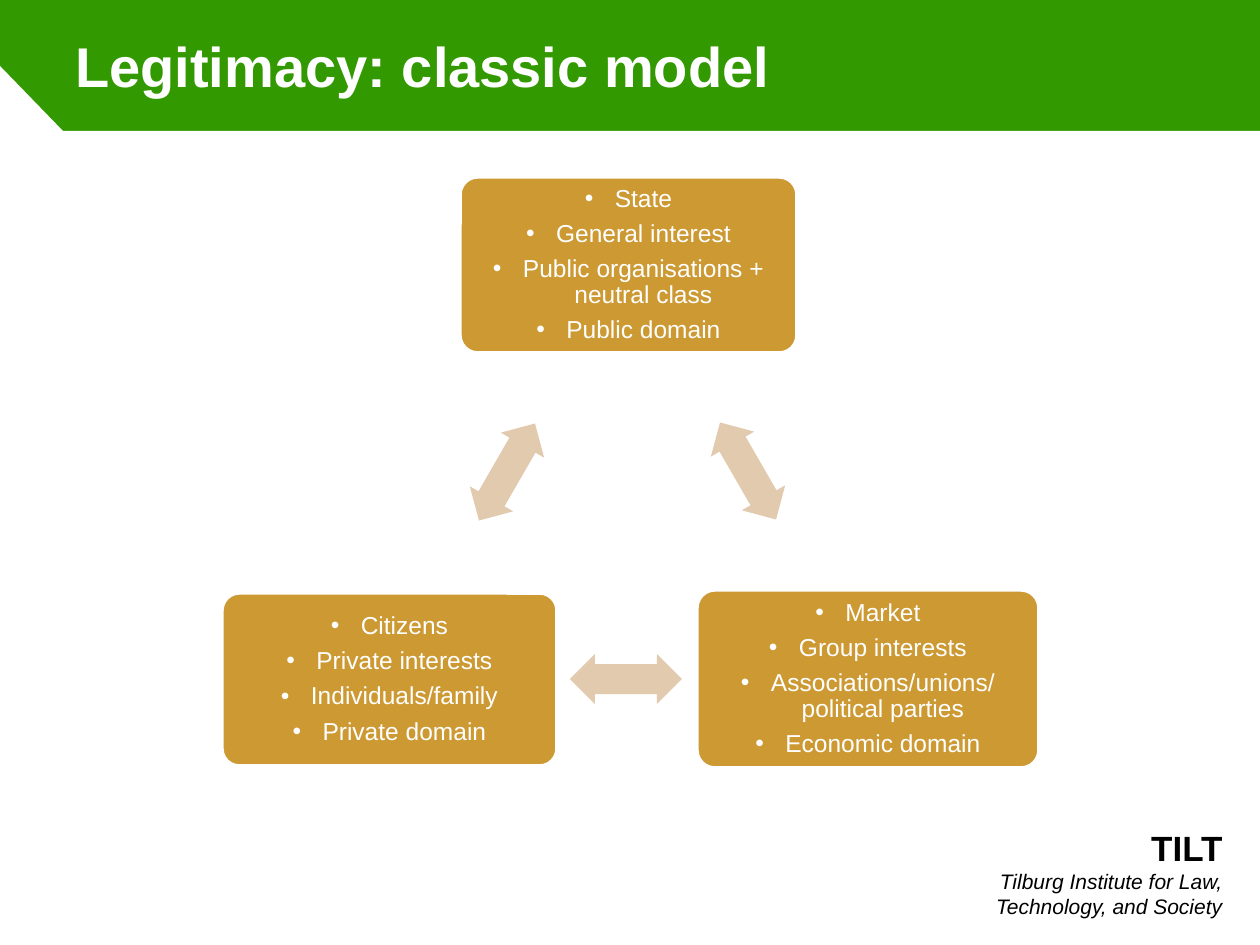
from dataclasses import dataclass

import pptx
import pptx.dml.color
import pptx.enum.shapes
import pptx.enum.text
import pptx.oxml.ns
import pptx.util
from lxml import etree

PX = pptx.util.Inches(1) / 126
WIDTH, HEIGHT = 1260, 945
MSO = pptx.enum.shapes.MSO_SHAPE
ALIGN = pptx.enum.text.PP_ALIGN
ANCHOR = pptx.enum.text.MSO_ANCHOR


@dataclass(frozen=True)
class Theme:
    font: str = "Arial"
    green: str = "339900"
    white: str = "FFFFFF"
    black: str = "000000"
    gold: str = "CC9933"
    sand: str = "E2CAAE"
    title_size: int = 32
    name_size: int = 20
    item_size: int = 14
    caption_size: int = 12


@dataclass(frozen=True)
class Box:
    x: int
    y: int
    w: int
    h: int

    def emu(self) -> tuple:
        return tuple(px(v) for v in (self.x, self.y, self.w, self.h))


@dataclass(frozen=True)
class Actor:
    box: Box
    items: tuple


@dataclass(frozen=True)
class Arrow:
    box: Box
    rotation: int


THEME = Theme()

ACTORS = (
    Actor(Box(460, 177, 337, 176),
          ("State", "General interest", "Public organisations + neutral class", "Public domain")),
    Actor(Box(697, 590, 342, 178),
          ("Market", "Group interests", "Associations/unions/political parties", "Economic domain")),
    Actor(Box(222, 593, 335, 173),
          ("Citizens", "Private interests", "Individuals/family", "Private domain")),
)
ARROWS = (
    Arrow(Box(692, 446, 112, 50), 60),
    Arrow(Box(570, 654, 112, 50), 180),
    Arrow(Box(451, 447, 112, 50), 300),
)


def px(value: int) -> int:
    return round(value * PX)


def rgb(color: str) -> pptx.dml.color.RGBColor:
    return pptx.dml.color.RGBColor.from_string(color)


def style_run(r, size: int, color: str, bold: bool = False, italic: bool = False) -> None:
    r.font.name = THEME.font
    r.font.size = pptx.util.Pt(size)
    r.font.color.rgb = rgb(color)
    r.font.bold = bold
    r.font.italic = italic


def paint(sp, color: str) -> None:
    sp.shadow.inherit = False
    sp.fill.solid()
    sp.fill.fore_color.rgb = rgb(color)
    sp.line.fill.background()


def add_bullet(p) -> None:
    pPr = p._p.get_or_add_pPr()
    pPr.set("marL", str(px(30)))
    pPr.set("indent", str(px(-30)))
    qn = pptx.oxml.ns.qn
    etree.SubElement(pPr, qn("a:buFont")).set("typeface", THEME.font)
    etree.SubElement(pPr, qn("a:buChar")).set("char", "•")


def add_text(s, box: Box, text: str):
    tf = s.shapes.add_textbox(*box.emu()).text_frame
    tf.word_wrap = True
    tf.text = text
    return tf


def add_body_panel(s) -> None:
    fb = s.shapes.build_freeform(63, 131, scale=PX)
    fb.add_line_segments([(0, 66), (0, HEIGHT), (WIDTH, HEIGHT), (WIDTH, 131)], close=True)
    paint(fb.convert_to_shape(), THEME.white)


def add_actor(s, actor: Actor) -> None:
    sp = s.shapes.add_shape(MSO.ROUNDED_RECTANGLE, *actor.box.emu())
    sp.adjustments[0] = 0.1
    paint(sp, THEME.gold)
    sp.line.color.rgb = rgb(THEME.white)
    sp.line.width = pptx.util.Pt(2)
    tf = sp.text_frame
    tf.word_wrap = True
    tf.vertical_anchor = ANCHOR.MIDDLE
    tf.margin_left = tf.margin_right = tf.margin_top = tf.margin_bottom = px(7)
    tf.text = "\n".join(actor.items)
    for p in tf.paragraphs:
        add_bullet(p)
        p.alignment = ALIGN.CENTER
        p.line_spacing = 0.9
        p.space_after = pptx.util.Pt(4.9)
        style_run(p.runs[0], THEME.item_size, THEME.white)


def add_arrow(s, arrow: Arrow) -> None:
    sp = s.shapes.add_shape(MSO.LEFT_RIGHT_ARROW, *arrow.box.emu())
    sp.adjustments[0] = 0.6
    sp.adjustments[1] = 0.5
    sp.rotation = arrow.rotation
    paint(sp, THEME.sand)


def main() -> None:
    prs = pptx.Presentation()
    prs.slide_width, prs.slide_height = px(WIDTH), px(HEIGHT)
    s = prs.slides.add_slide(prs.slide_layouts[6])

    # Green background with the white body panel
    s.background.fill.solid()
    s.background.fill.fore_color.rgb = rgb(THEME.green)
    add_body_panel(s)

    # Title
    tf = add_text(s, Box(63, 0, 1134, 131), "Legitimacy: classic model")
    tf.vertical_anchor = ANCHOR.MIDDLE
    style_run(tf.paragraphs[0].runs[0], THEME.title_size, THEME.white, bold=True)

    # Institute name
    tf = add_text(s, Box(917, 820, 318, 106),
                  "TILT\vTilburg Institute for Law, Technology, and Society")
    p = tf.paragraphs[0]
    p.alignment = ALIGN.RIGHT
    name, caption = p.runs
    style_run(name, THEME.name_size, THEME.black, bold=True)
    style_run(caption, THEME.caption_size, THEME.black, italic=True)

    # Cycle of actors and arrows
    for actor, arrow in zip(ACTORS, ARROWS):
        add_actor(s, actor)
        add_arrow(s, arrow)

    prs.save("out.pptx")


if __name__ == "__main__":
    main()
